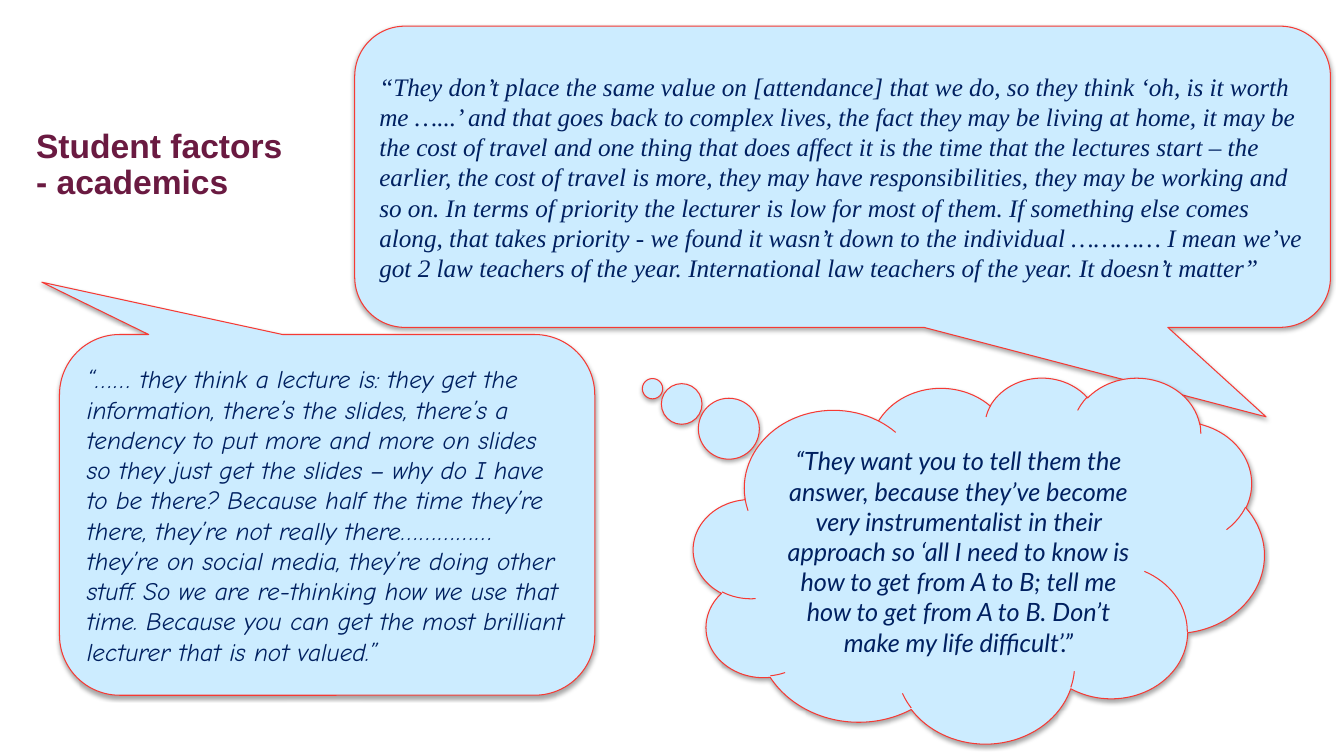
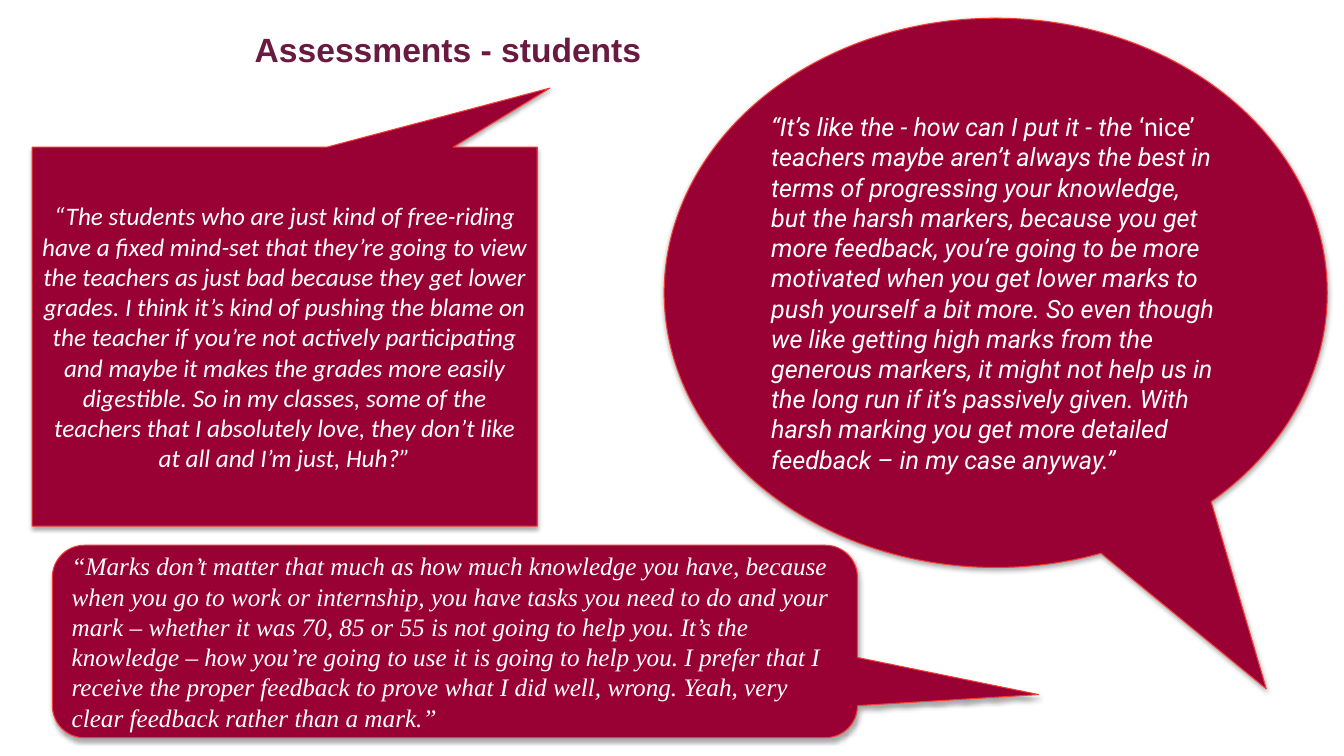
from lxml import etree
from pptx import Presentation
from pptx.dml.color import RGBColor
from pptx.enum.shapes import MSO_SHAPE as Shape
from pptx.enum.text import MSO_ANCHOR as Anchor, MSO_AUTO_SIZE as AutoSize, PP_ALIGN as Align
from pptx.oxml.ns import qn
from pptx.util import Cm, Pt

COLORS = {"title": "6A1A41", "outline": "F63A34", "shadow": "000000",
          "sky": "CCECFF", "navy": "002060", "wine": "990033", "white": "FFFFFF"}

# Content: boxes are left, top, width, height in cm; each run is (text, italic)
SLIDES = [
    {
        "title": "Student factors - academics",
        "title_box": (0.66, 3.12, 6.96, 2.11),
        "fill": "sky", "ink": "navy",
        "quotes": [
            {"kind": Shape.ROUNDED_RECTANGULAR_CALLOUT, "box": (8.94, 0.66, 24.59, 7.59),
             "tail": (0.434, 0.797), "font": "Times New Roman", "align": Align.LEFT,
             "runs": [(
                 "“They don’t place the same value on [attendance] that we do, so they think "
                 "‘oh, is it worth me …...’ and that goes back to complex lives, the fact they "
                 "may be living at home, it may be the cost of travel and one thing that does "
                 "affect it is the time that the lectures start – the earlier, the cost of "
                 "travel is more, they may have responsibilities, they may be working and so "
                 "on. In terms of priority the lecturer is low for most of them. If something "
                 "else comes along, that takes priority - we found it wasn’t down to the "
                 "individual ………… I mean we’ve got 2 law teachers of the year. International "
                 "law teachers of the year. It doesn’t matter”", True)]},
            {"kind": Shape.ROUNDED_RECTANGULAR_CALLOUT, "box": (1.5, 8.43, 13.49, 9.09),
             "tail": (-0.533, -0.645), "font": "Comic Neue", "align": Align.LEFT,
             "runs": [(
                 "“…… they think a lecture is: they get the information, there’s the slides, "
                 "there’s a tendency to put more and more on slides so they just get the "
                 "slides – why do I have to be there? Because half the time they’re there, "
                 "they’re not really there…………… they’re on social media, they’re doing other "
                 "stuff. So we are re-thinking how we use that time. Because you can get the "
                 "most brilliant lecturer that is not valued.”", True)]},
            {"kind": Shape.CLOUD_CALLOUT, "box": (17.48, 9.5, 14.38, 9.22),
             "tail": (-0.572, -0.468), "font": "Lato", "align": Align.CENTER,
             "runs": [(
                 "“They want you to tell them the answer, because they’ve become very "
                 "instrumentalist in their approach so ‘all I need to know is how to get from "
                 "A to B; tell me how to get from A to B. Don’t make my life difficult’.”",
                 True)]},
        ],
    },
    {
        "title": "Assessments - students",
        "title_box": (6.17, 0.71, 11.84, 1.19),
        "fill": "wine", "ink": "white",
        "quotes": [
            {"kind": Shape.RECTANGULAR_CALLOUT, "box": (0.81, 3.71, 12.73, 9.55),
             "tail": (0.525, -0.656), "font": "Calibri", "align": Align.CENTER,
             "runs": [(
                 "“The students who are just kind of free-riding have a fixed mind-set that "
                 "they’re going to view the teachers as just bad because they get lower "
                 "grades. I think it’s kind of pushing the blame on the teacher if you’re not "
                 "actively participating and maybe it makes the grades more easily "
                 "digestible. So in my classes, some of the teachers that I absolutely love, "
                 "they don’t like at all and I’m just, Huh?”", True)]},
            {"kind": Shape.OVAL_CALLOUT, "box": (16.74, 0.46, 16.71, 13.84),
             "tail": (0.408, 0.721), "font": "Roboto", "align": Align.LEFT,
             "runs": [
                 ("“It’s like the - how can I put it - the ", True),
                 ("‘nice’ ", False),
                 ("teachers maybe aren’t always the best in terms of progressing your "
                  "knowledge, but the harsh markers, because you get more feedback, you’re "
                  "going to be more motivated when you get lower marks to push yourself a bit "
                  "more. So even though we like getting high marks from the generous markers, "
                  "it might not help us in the long run if it’s passively given. With harsh "
                  "marking you get more detailed feedback – in my case anyway.”", True)]},
            {"kind": Shape.ROUNDED_RECTANGULAR_CALLOUT, "box": (1.32, 13.74, 20.29, 4.85),
             "tail": (0.725, 0.276), "font": "Times New Roman", "align": Align.LEFT,
             "runs": [(
                 "“Marks don’t matter that much as how much knowledge you have, because when "
                 "you go to work or internship, you have tasks you need to do and your mark – "
                 "whether it was 70, 85 or 55 is not going to help you. It’s the knowledge – "
                 "how you’re going to use it is going to help you. I prefer that I receive the "
                 "proper feedback to prove what I did well, wrong. Yeah, very clear feedback "
                 "rather than a mark.”", True)]},
        ],
    },
]

# Shared formats
TITLE_FONT = {"name": "Arial", "size": Pt(24), "bold": True}
QUOTE_SIZE = Pt(18)
SHADOW = {"blurRad": Pt(3.1), "dist": Pt(1.8), "dir": 90 * 60000, "rotWithShape": 0}
SHADOW_ALPHA = 35000


def color(name):
    return RGBColor.from_string(COLORS[name])


def add_run(paragraph, text, ink, font_format):
    run = paragraph.add_run()
    run.text = text
    for attribute, value in font_format.items():
        setattr(run.font, attribute, value)
    run.font.color.rgb = color(ink)


def add_shadow(shape):
    shape.shadow.inherit = False
    effects = shape._element.spPr.find(qn("a:effectLst"))
    outer = etree.SubElement(effects, qn("a:outerShdw"),
                             {key: str(value) for key, value in SHADOW.items()})
    shade = etree.SubElement(outer, qn("a:srgbClr"), val=COLORS["shadow"])
    etree.SubElement(shade, qn("a:alpha"), val=str(SHADOW_ALPHA))


def add_title(slide, text, box):
    frame = slide.shapes.add_textbox(*map(Cm, box)).text_frame
    frame.word_wrap = True
    frame.auto_size = AutoSize.SHAPE_TO_FIT_TEXT
    paragraph = frame.paragraphs[0]
    paragraph.line_spacing = Pt(26)
    add_run(paragraph, text, "title", TITLE_FONT)


def add_quote(slide, quote, fill, ink):
    shape = slide.shapes.add_shape(quote["kind"], *map(Cm, quote["box"]))
    for index, offset in enumerate(quote["tail"]):
        shape.adjustments[index] = offset
    shape.fill.solid()
    shape.fill.fore_color.rgb = color(fill)
    shape.line.color.rgb = color("outline")
    shape.line.width = Pt(0.75)
    add_shadow(shape)

    frame = shape.text_frame
    frame.word_wrap = True
    frame.vertical_anchor = Anchor.MIDDLE
    paragraph = frame.paragraphs[0]
    paragraph.alignment = quote["align"]
    for text, italic in quote["runs"]:
        add_run(paragraph, text, ink,
                {"name": quote["font"], "size": QUOTE_SIZE, "italic": italic})


def main():
    presentation = Presentation()
    presentation.slide_width, presentation.slide_height = Cm(33.87), Cm(19.05)
    blank = presentation.slide_layouts[6]
    for content in SLIDES:
        slide = presentation.slides.add_slide(blank)
        for quote in content["quotes"]:
            add_quote(slide, quote, content["fill"], content["ink"])
        add_title(slide, content["title"], content["title_box"])
    presentation.save("out.pptx")


if __name__ == "__main__":
    main()
